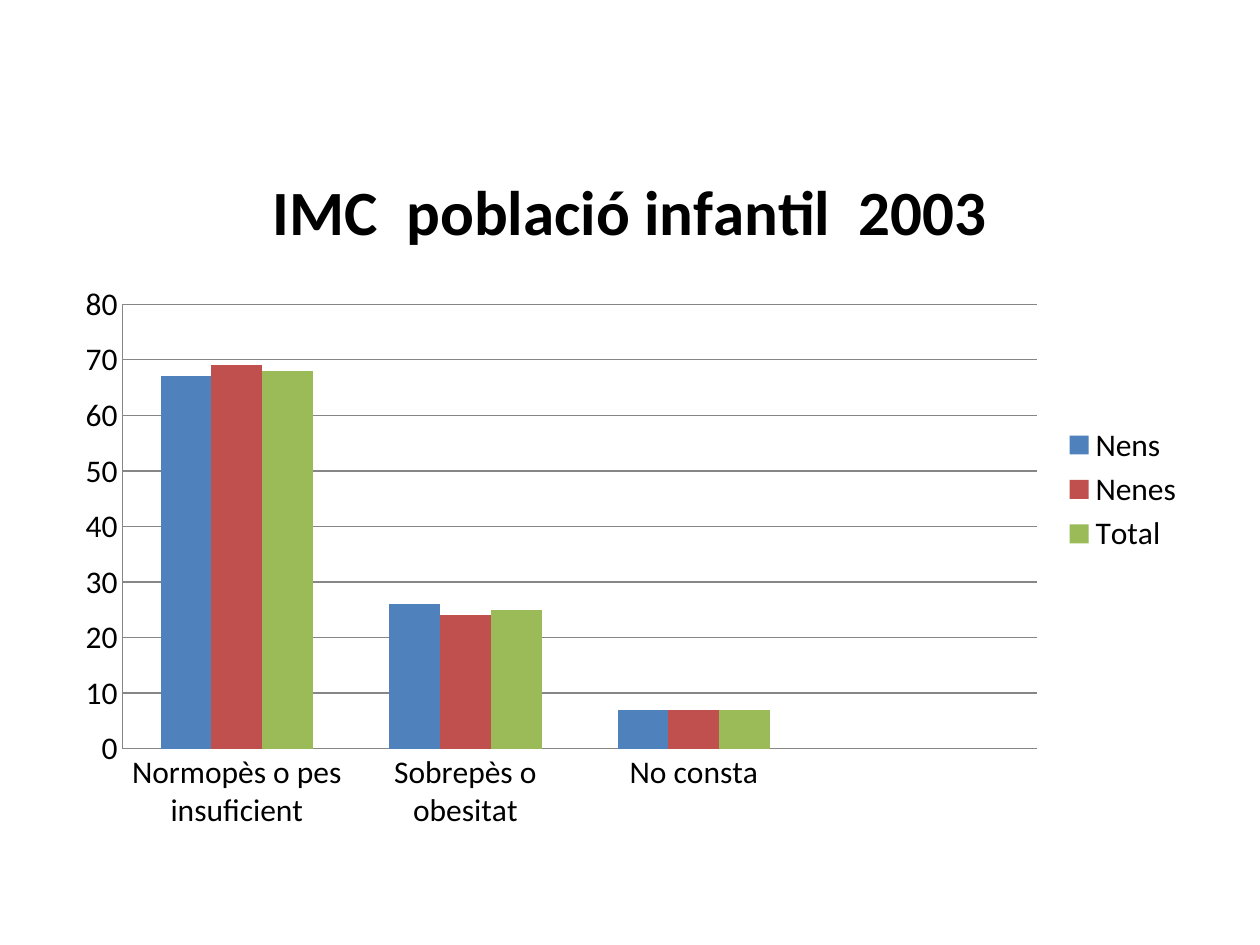
from pptx import Presentation
from pptx.chart.data import CategoryChartData
from pptx.dml.color import RGBColor
from pptx.enum.chart import XL_CHART_TYPE, XL_LEGEND_POSITION, XL_TICK_MARK
from pptx.util import Pt

CLUSTERED = XL_CHART_TYPE.COLUMN_CLUSTERED
LEGEND_RIGHT = XL_LEGEND_POSITION.RIGHT
NO_TICK = XL_TICK_MARK.NONE
EMU_PER_PX = 914400 / 126
COLORS = {
    "text": "000000",
    "line": "868686",
    "Nens": "4F81BD",
    "Nenes": "C0504D",
    "Total": "9BBB59",
}
# The last category is an empty slot on the axis.
CATEGORIES = ["Normopès o pes insuficient", "Sobrepès o obesitat", "No consta", ""]
SERIES = {
    "Nens": [67, 26, 7, None],
    "Nenes": [69, 24, 7, None],
    "Total": [68, 25, 7, None],
}


def px(length):
    return round(length * EMU_PER_PX)


def format_font(font, size, bold=False):
    font.name = "Calibri"
    font.size = Pt(size)
    font.bold = bold
    font.color.rgb = RGBColor.from_string(COLORS["text"])


deck = Presentation()
deck.slide_width, deck.slide_height = px(1260), px(945)
page = deck.slides.add_slide(deck.slide_layouts[6])

data = CategoryChartData(number_format="General")
data.categories = CATEGORIES
for name, values in SERIES.items():
    data.add_series(name, values)
chart = page.shapes.add_chart(
    CLUSTERED, px(63), px(135), px(1134), px(709), data
).chart
format_font(chart.font, 18)

chart.has_title = True
title = chart.chart_title.text_frame
title.text = "IMC  població infantil  2003"
format_font(title.paragraphs[0].runs[0].font, 36, bold=True)
chart.chart_title.include_in_layout = False

chart.has_legend = True
chart.legend.position = LEGEND_RIGHT
chart.legend.include_in_layout = False

plot = chart.plots[0]
plot.gap_width = 150
plot.overlap = 0
plot.vary_by_categories = False
for series in plot.series:
    series.format.fill.solid()
    series.format.fill.fore_color.rgb = RGBColor.from_string(COLORS[series.name])

value_axis = chart.value_axis
value_axis.minimum_scale = 0
value_axis.maximum_scale = 80
value_axis.major_unit = 10
value_axis.has_major_gridlines = True
axes = [chart.category_axis, value_axis]
for axis in axes:
    axis.major_tick_mark = NO_TICK
    axis.minor_tick_mark = NO_TICK
for lined in [*axes, value_axis.major_gridlines]:
    lined.format.line.width = Pt(0.75)
    lined.format.line.color.rgb = RGBColor.from_string(COLORS["line"])

deck.save("out.pptx")
